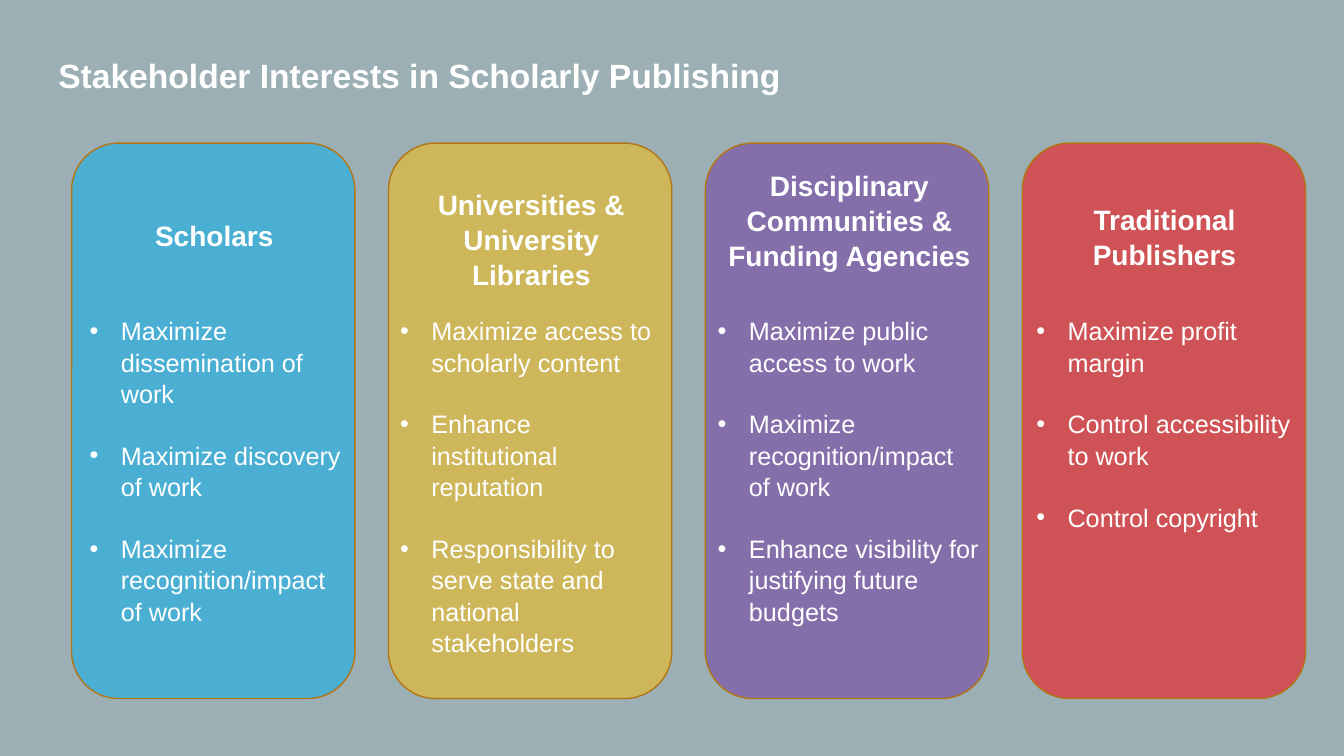
"""Build the slide on stakeholder interests in scholarly publishing."""
from lxml import etree
from pptx import Presentation
from pptx.dml.color import RGBColor
from pptx.enum.shapes import MSO_SHAPE
from pptx.enum.text import PP_ALIGN
from pptx.oxml.ns import qn
from pptx.util import Inches, Pt

ROUNDED = MSO_SHAPE.ROUNDED_RECTANGLE
LEFT, CENTER = PP_ALIGN.LEFT, PP_ALIGN.CENTER
WHITE, BACKGROUND, OUTLINE = "FFFFFF", "9BAFB5", "B37615"
CARD_LEFT, CARD_STEP, CARD_WIDTH = 0.71, 3.143, 2.81
LINE_SPACING = 1.04

STAKEHOLDERS = [
    ("Scholars", (1.43, 2.11, 1.39, 0.44), "00B0F0", 51, 0.79, 3.43,
     ["Maximize dissemination of work",
      "Maximize discovery of work",
      "Maximize recognition/impact of work"]),
    ("Universities & University Libraries", (4.02, 1.8, 2.5, 1.11), "FFC000", 50, 3.87, 3.74,
     ["Maximize access to scholarly content",
      "Enhance institutional reputation",
      "Responsibility to serve state and national stakeholders"]),
    ("Disciplinary Communities & Funding Agencies", (7.08, 1.61, 2.69, 1.11), "7030A0", 50, 7.02, 3.13,
     ["Maximize public access to work",
      "Maximize recognition/impact of work",
      "Enhance visibility for justifying future budgets"]),
    ("Traditional Publishers", (10.31, 1.95, 2.48, 0.77), "FF0000", 52, 10.18, 2.52,
     ["Maximize profit margin",
      "Control accessibility to work",
      "Control copyright"]),
]


def color(value):
    """Turn a hex string into a colour."""
    return RGBColor.from_string(value)


def add_text(box, lines, size, bold=False, align=LEFT):
    """Add a text box with one paragraph per line and return its paragraphs."""
    tf = s.shapes.add_textbox(*[Inches(v) for v in box]).text_frame
    tf.word_wrap = True
    for i, line in enumerate(lines):
        p = tf.add_paragraph() if i else tf.paragraphs[0]
        p.alignment = align
        p.line_spacing = LINE_SPACING
        r = p.add_run()
        r.text = line
        r.font.name = "Arial"
        r.font.size = Pt(size)
        r.font.bold = bold
        r.font.color.rgb = color(WHITE)
    return tf.paragraphs


prs = Presentation()
prs.slide_width, prs.slide_height = Inches(13.33), Inches(7.5)
s = prs.slides.add_slide(prs.slide_layouts[6])
s.background.fill.solid()
s.background.fill.fore_color.rgb = color(BACKGROUND)

add_text((0.48, 0.48, 7.43, 0.5), ["Stakeholder Interests in Scholarly Publishing"], 24, True)

for i, (name, name_box, fill, opacity, list_left, list_height, interests) in enumerate(STAKEHOLDERS):
    card = s.shapes.add_shape(ROUNDED, Inches(CARD_LEFT + i * CARD_STEP), Inches(1.42),
                              Inches(CARD_WIDTH), Inches(5.51))
    card.shadow.inherit = False
    card.fill.solid()
    card.fill.fore_color.rgb = color(fill)
    rgb = card.fill._xPr.find(qn("a:solidFill")).find(qn("a:srgbClr"))
    etree.SubElement(rgb, qn("a:alpha"), val=str(opacity * 1000))
    card.line.color.rgb = color(OUTLINE)
    card.line.width = Pt(1)

    add_text(name_box, [name], 20, True, CENTER)

    paragraphs = add_text((list_left, 3.07, CARD_WIDTH, list_height), interests, 18)
    for n, p in enumerate(paragraphs):
        p.space_before = Pt(21.6 if n else 0)
        pPr = p._p.get_or_add_pPr()
        pPr.set("marL", str(Inches(0.31)))
        pPr.set("indent", str(Inches(-0.31)))
        bullet_color = etree.SubElement(pPr, qn("a:buClr"))
        etree.SubElement(bullet_color, qn("a:srgbClr"), val=WHITE)
        etree.SubElement(pPr, qn("a:buFont"), typeface="Arial")
        etree.SubElement(pPr, qn("a:buChar"), char="•")

prs.save("out.pptx")
